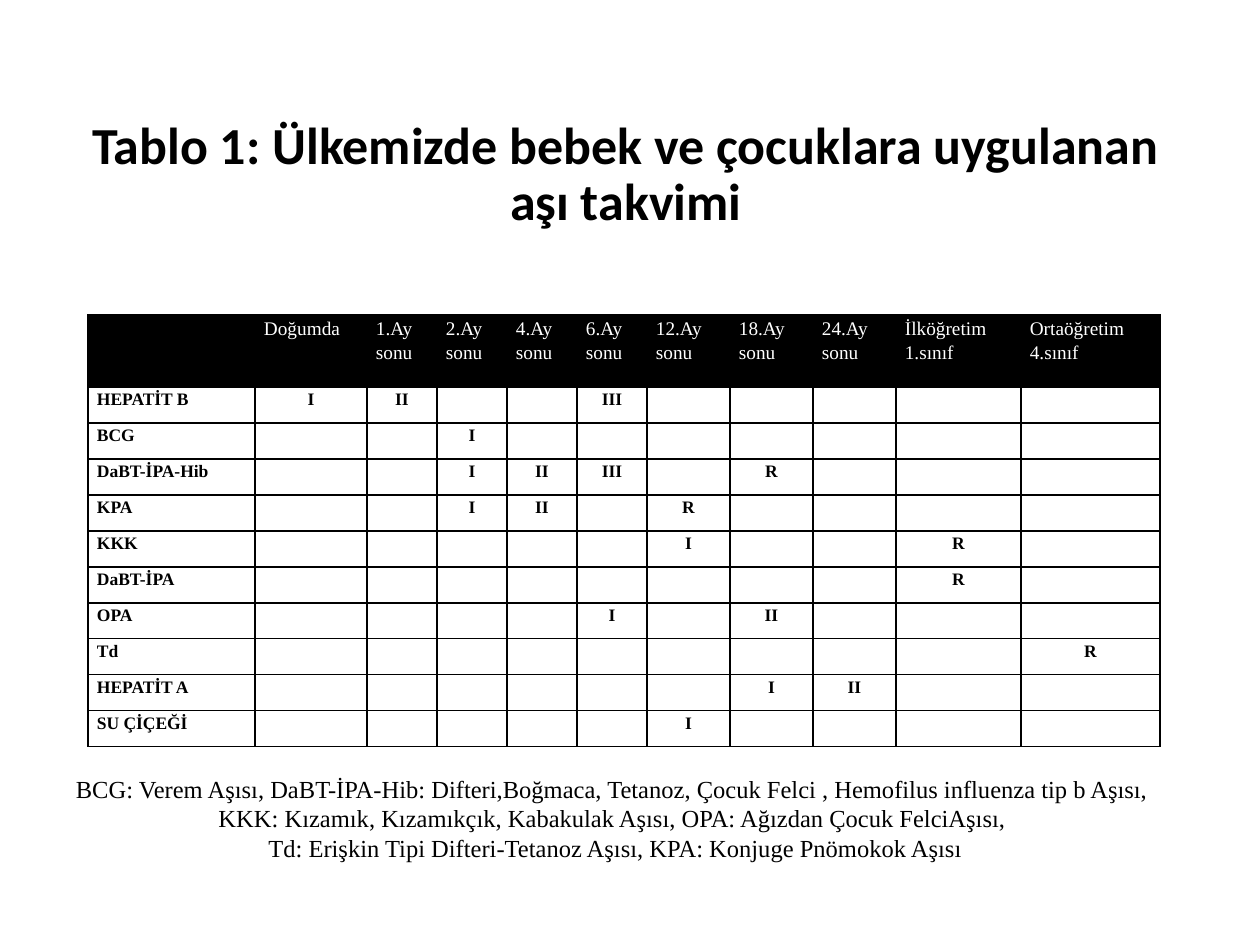
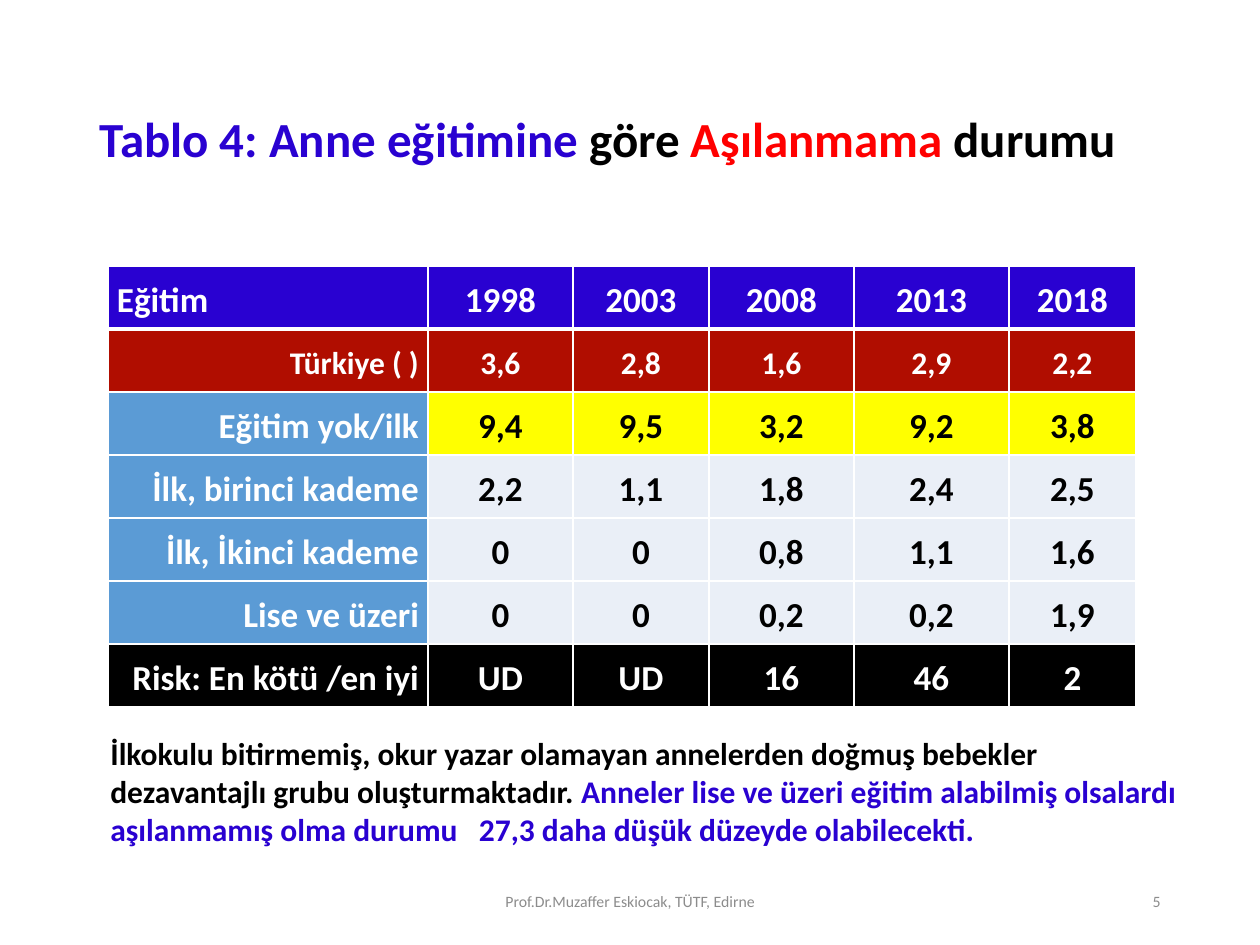
from dataclasses import dataclass
from typing import Optional

from lxml.etree import SubElement
from pptx import Presentation
from pptx.dml.color import RGBColor
from pptx.enum.text import MSO_ANCHOR, MSO_AUTO_SIZE, PP_ALIGN
from pptx.oxml.ns import qn
from pptx.util import Emu, Pt

EMU_PER_PX = 914400 / 126


@dataclass(frozen=True)
class Theme:
    sans: str = "Calibri"
    serif: str = "Times New Roman"
    white: str = "FFFFFF"
    black: str = "000000"
    violet: str = "2901D1"
    red: str = "FF0000"
    dark_red: str = "B00D00"
    blue: str = "5B9BD5"
    pale_blue: str = "EAEFF7"
    yellow: str = "FFFF00"
    gray: str = "8C8C8C"
    calendar_title_size: float = 29.7
    title_size: float = 28
    calendar_head_size: float = 11
    calendar_size: float = 10
    key_size: float = 14
    education_size: float = 20
    note_size: float = 18
    footer_size: float = 9
    title_spacing: float = 0.9
    table_spacing: float = 1.15


THEME = Theme()


@dataclass(frozen=True)
class Frame:
    left: int
    top: int
    width: int
    height: int

    def emu(self) -> tuple:
        return px(self.left), px(self.top), px(self.width), px(self.height)


@dataclass(frozen=True)
class Style:
    font: str
    size: float
    color: str = THEME.black
    bold: bool = False


@dataclass(frozen=True)
class Span:
    text: str
    style: Style


@dataclass(frozen=True)
class Cell:
    span: Span
    fill: Optional[str] = None
    align: PP_ALIGN = PP_ALIGN.CENTER


@dataclass(frozen=True)
class Grid:
    left: int
    top: int
    columns: list
    rows: list
    line_color: str
    anchor: MSO_ANCHOR
    head_line: float = 1


def px(value: int) -> Emu:
    return Emu(round(value * EMU_PER_PX))


def rgb(color: str) -> RGBColor:
    return RGBColor.from_string(color)


def add_span(para, span: Span) -> None:
    run = para.add_run()
    run.text = span.text
    run.font.name = span.style.font
    run.font.size = Pt(span.style.size)
    run.font.bold = span.style.bold
    run.font.color.rgb = rgb(span.style.color)


def write_lines(text_frame, lines: list, align: PP_ALIGN, spacing: float = 1.0) -> None:
    """Write each list of spans as one paragraph."""
    for index, spans in enumerate(lines):
        para = text_frame.add_paragraph() if index else text_frame.paragraphs[0]
        para.alignment = align
        para.line_spacing = spacing
        for span in spans:
            add_span(para, span)


def add_title(page, frame: Frame, spans: list, align: PP_ALIGN):
    title = page.shapes.title
    title.left, title.top, title.width, title.height = frame.emu()
    title.text_frame.auto_size = MSO_AUTO_SIZE.NONE
    title.text_frame.vertical_anchor = MSO_ANCHOR.MIDDLE
    write_lines(title.text_frame, [spans], align, THEME.title_spacing)
    return title


def add_text(page, frame: Frame, lines: list, align: PP_ALIGN = PP_ALIGN.LEFT,
             anchor: MSO_ANCHOR = MSO_ANCHOR.MIDDLE, wrap: bool = True) -> None:
    box = page.shapes.add_textbox(*frame.emu())
    box.text_frame.word_wrap = wrap
    box.text_frame.vertical_anchor = anchor
    write_lines(box.text_frame, lines, align)


def draw_borders(cell, color: str, top: float, bottom: float) -> None:
    properties = cell._tc.get_or_add_tcPr()
    widths = {"a:lnL": 1, "a:lnR": 1, "a:lnT": top, "a:lnB": bottom}
    for index, (tag, width) in enumerate(widths.items()):
        line = SubElement(properties, qn(tag), w=str(Pt(width)))
        fill = SubElement(line, qn("a:solidFill"))
        SubElement(fill, qn("a:srgbClr"), val=color)
        properties.insert(index, line)


def fill_cell(target, cell: Cell, anchor: MSO_ANCHOR) -> None:
    target.margin_left = target.margin_right = px(9)
    target.margin_top = target.margin_bottom = 0
    target.vertical_anchor = anchor
    if cell.fill:
        target.fill.solid()
        target.fill.fore_color.rgb = rgb(cell.fill)
    else:
        target.fill.background()
    if cell.span.text:
        write_lines(target.text_frame, [[cell.span]], cell.align, THEME.table_spacing)
    else:
        # An empty cell keeps its type size, so its row does not grow.
        para = target.text_frame.paragraphs[0]
        SubElement(para._p, qn("a:endParaRPr"), sz=str(Pt(cell.span.style.size).centipoints))


def add_grid(page, grid: Grid, cells: list) -> None:
    frame = Frame(grid.left, grid.top, sum(grid.columns), sum(grid.rows))
    table = page.shapes.add_table(len(grid.rows), len(grid.columns), *frame.emu()).table
    table.first_row = table.horz_banding = False
    for column, width in zip(table.columns, grid.columns):
        column.width = px(width)
    for row, height in zip(table.rows, grid.rows):
        row.height = px(height)
    for row_index, row_cells in enumerate(cells):
        top = grid.head_line if row_index == 1 else 1
        bottom = grid.head_line if row_index == 0 else 1
        for column_index, cell in enumerate(row_cells):
            target = table.cell(row_index, column_index)
            fill_cell(target, cell, grid.anchor)
            draw_borders(target, grid.line_color, top, bottom)


AGES = ["", "Doğumda", "1.Ay sonu", "2.Ay sonu", "4.Ay sonu", "6.Ay sonu", "12.Ay sonu",
        "18.Ay sonu", "24.Ay sonu", "İlköğretim 1.sınıf", "Ortaöğretim 4.sınıf"]

# Doses of each vaccine by column of AGES
DOSES = {
    "HEPATİT B": {1: "I", 2: "II", 5: "III"},
    "BCG": {3: "I"},
    "DaBT-İPA-Hib": {3: "I", 4: "II", 5: "III", 7: "R"},
    "KPA": {3: "I", 4: "II", 6: "R"},
    "KKK": {6: "I", 9: "R"},
    "DaBT-İPA": {9: "R"},
    "OPA": {5: "I", 7: "II"},
    "Td": {10: "R"},
    "HEPATİT A": {7: "I", 8: "II"},
    "SU ÇİÇEĞİ": {6: "I"},
}

VACCINE_KEY = [
    "BCG: Verem Aşısı, DaBT-İPA-Hib: Difteri,Boğmaca, Tetanoz, Çocuk Felci , "
    "Hemofilus influenza tip b Aşısı, ",
    "KKK: Kızamık, Kızamıkçık, Kabakulak Aşısı, OPA: Ağızdan Çocuk FelciAşısı, ",
    "Td: Erişkin Tipi Difteri-Tetanoz Aşısı, KPA: Konjuge Pnömokok Aşısı",
]


def build_calendar(page) -> None:
    title_style = Style(THEME.sans, THEME.calendar_title_size, bold=True)
    title = add_title(
        page, Frame(59, 108, 1134, 136),
        [Span("Tablo 1: Ülkemizde bebek ve çocuklara uygulanan aşı takvimi", title_style)],
        PP_ALIGN.CENTER)
    title.fill.solid()
    title.fill.fore_color.rgb = rgb(THEME.white)

    head = Style(THEME.serif, THEME.calendar_head_size, THEME.white)
    body = Style(THEME.serif, THEME.calendar_size, bold=True)
    cells = [[Cell(Span(age, head), THEME.black, PP_ALIGN.LEFT) for age in AGES]]
    for vaccine, doses in DOSES.items():
        name = Cell(Span(vaccine, body), align=PP_ALIGN.LEFT)
        cells.append([name] + [Cell(Span(doses.get(column, ""), body))
                               for column in range(1, len(AGES))])
    columns = [167, 112] + [70] * 4 + [83] * 3 + [125, 139]
    rows = [72] + [36] * len(DOSES)
    add_grid(page, Grid(88, 315, columns, rows, THEME.black, MSO_ANCHOR.TOP), cells)

    key = Style(THEME.serif, THEME.key_size)
    add_text(page, Frame(59, 767, 1113, 102), [[Span(line, key)] for line in VACCINE_KEY],
             PP_ALIGN.CENTER, wrap=False)


@dataclass(frozen=True)
class EducationRow:
    label: str
    values: str
    label_fill: str
    value_fill: str
    value_color: str = THEME.black
    size: float = THEME.education_size
    label_align: PP_ALIGN = PP_ALIGN.RIGHT

    def cells(self) -> list:
        label = Style(THEME.sans, self.size, THEME.white, True)
        value = Style(THEME.sans, self.size, self.value_color, True)
        return [Cell(Span(self.label, label), self.label_fill, self.label_align)] + [
            Cell(Span(text, value), self.value_fill) for text in self.values.split()]


EDUCATION = [
    EducationRow("Eğitim", "1998 2003 2008 2013 2018", THEME.violet, THEME.violet,
                 THEME.white, label_align=PP_ALIGN.LEFT),
    EducationRow("Türkiye ( )", "3,6 2,8 1,6 2,9 2,2", THEME.dark_red, THEME.dark_red,
                 THEME.white, THEME.note_size),
    EducationRow("Eğitim yok/ilk", "9,4 9,5 3,2 9,2 3,8", THEME.blue, THEME.yellow),
    EducationRow("İlk, birinci kademe", "2,2 1,1 1,8 2,4 2,5", THEME.blue, THEME.pale_blue),
    EducationRow("İlk, İkinci kademe", "0 0 0,8 1,1 1,6", THEME.blue, THEME.pale_blue),
    EducationRow("Lise ve üzeri", "0 0 0,2 0,2 1,9", THEME.blue, THEME.pale_blue),
    EducationRow("Risk: En kötü /en iyi", "UD UD 16 46 2", THEME.black, THEME.black,
                 THEME.white),
]


def build_education(page) -> None:
    plain = Style(THEME.sans, THEME.title_size, bold=True)
    violet = Style(THEME.sans, THEME.title_size, THEME.violet, True)
    red = Style(THEME.sans, THEME.title_size, THEME.red, True)
    add_title(page, Frame(87, 50, 1086, 183),
              [Span("Tablo 4: Anne eğitimine ", violet), Span("göre ", plain),
               Span("Aşılanmama", red), Span(" durumu", plain)], PP_ALIGN.LEFT)

    grid = Grid(108, 266, [320, 145, 136, 145, 155, 127], [63] * len(EDUCATION),
                THEME.white, MSO_ANCHOR.MIDDLE, head_line=3)
    add_grid(page, grid, [row.cells() for row in EDUCATION])

    footer = Style(THEME.sans, THEME.footer_size, THEME.gray)
    add_text(page, Frame(417, 876, 426, 50),
             [[Span("Prof.Dr.Muzaffer Eskiocak, TÜTF, Edirne", footer)]], PP_ALIGN.CENTER)
    add_text(page, Frame(890, 876, 283, 50), [[Span("5", footer)]], PP_ALIGN.RIGHT)

    note = Style(THEME.sans, THEME.note_size, bold=True)
    accent = Style(THEME.sans, THEME.note_size, THEME.violet, True)
    add_text(page, Frame(98, 728, 1121, 127), [
        [Span("İlkokulu bitirmemiş, okur yazar olamayan annelerden doğmuş bebekler", note)],
        [Span("dezavantajlı grubu oluşturmaktadır. ", note),
         Span("Anneler lise ve üzeri eğitim alabilmiş olsalardı", accent)],
        [Span("aşılanmamış olma durumu   27,3 daha düşük düzeyde olabilecekti.", accent)],
    ], anchor=MSO_ANCHOR.TOP, wrap=False)


def main() -> None:
    deck = Presentation()
    deck.slide_width, deck.slide_height = px(1260), px(945)
    title_only = deck.slide_layouts[5]
    for build in (build_calendar, build_education):
        build(deck.slides.add_slide(title_only))
    deck.save("out.pptx")


if __name__ == "__main__":
    main()
